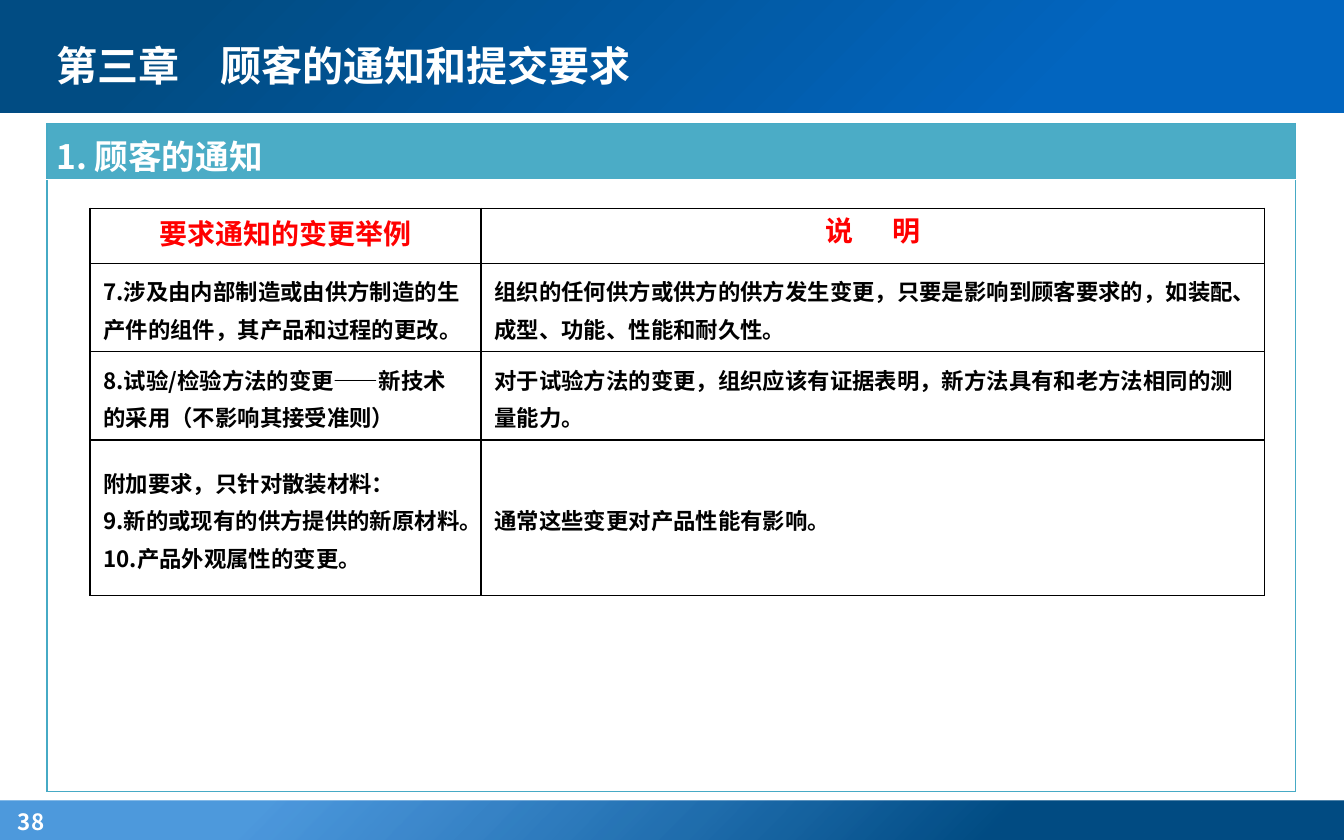
from dataclasses import dataclass

from lxml import etree
from pptx import Presentation
from pptx import oxml
from pptx import util as u
from pptx.dml.color import RGBColor
from pptx.enum import lang, shapes, text
from pptx.oxml import ns

Pt = u.Pt
NOTO, KARLA, TIMES = "Noto Sans CJK SC", "Karla", "Times New Roman"
WHITE, BLACK, RED = "FFFFFF", "000000", "FF0000"
TEAL, TEAL_LINE = "4BACC6", "46AAC5"
NAVY = "014C83"
WIDE_GAP = "\u3000"


@dataclass(frozen=True)
class Style:
    size: float
    font: str
    color: str


@dataclass(frozen=True)
class Band:
    top: float
    height: float
    stops: tuple  # (position %, colour, opacity %)


@dataclass(frozen=True)
class Change:
    example: tuple  # one entry per paragraph
    note: str
    height: float


TITLE = Style(22, TIMES, WHITE)
SECTION = Style(18, NOTO, WHITE)
HEADING = Style(15, KARLA, RED)
HEADING_GAP = Style(21, KARLA, RED)
BODY = Style(12, NOTO, BLACK)
PAGE = Style(12, NOTO, WHITE)

BANDS = (
    Band(429, 22.5, ((26, NAVY, 100), (80, "026DCE", 70))),
    Band(-2, 62.5, ((21, "0265BF", 100), (86, NAVY, 100))),
)
CHANGES = (
    Change(("7.涉及由内部制造或由供方制造的生产件的组件，其产品和过程的更改。",),
           "组织的任何供方或供方的供方发生变更，只要是影响到顾客要求的，"
           "如装配、成型、功能、性能和耐久性。", 29.5),
    Change(("8.试验/检验方法的变更——新技术的采用（不影响其接受准则）",),
           "对于试验方法的变更，组织应该有证据表明，"
           "新方法具有和老方法相同的测量能力。", 29.5),
    Change(("附加要求，只针对散装材料：",
            "9.新的或现有的供方提供的新原材料。",
            "10.产品外观属性的变更。"),
           "通常这些变更对产品性能有影响。", 83.5),
)


def rgb(color: str) -> RGBColor:
    return RGBColor.from_string(color)


def add_run(p, content: str, style: Style) -> None:
    r = p.add_run()
    r.text = content
    f = r.font
    f.size, f.name, f.bold = Pt(style.size), style.font, True
    f.color.rgb = rgb(style.color)
    f.language_id = lang.MSO_LANGUAGE_ID.SIMPLIFIED_CHINESE
    ea = etree.Element(ns.qn("a:ea"), typeface=NOTO)
    r._r.rPr.find(ns.qn("a:latin")).addnext(ea)


def add_band(s, band: Band, width: int) -> None:
    sp = s.shapes.add_shape(shapes.MSO_SHAPE.RECTANGLE, 0, Pt(band.top),
                            width, Pt(band.height))
    sp.shadow.inherit = False
    sp.line.fill.background()
    sp.fill.solid()
    stops = "".join(
        f'<a:gs pos="{pos * 1000}"><a:srgbClr val="{color}">'
        f'<a:alpha val="{opacity * 1000}"/></a:srgbClr></a:gs>'
        for pos, color, opacity in band.stops)
    grad = oxml.parse_xml(
        f'<a:gradFill {ns.nsdecls("a")} rotWithShape="1"><a:gsLst>{stops}</a:gsLst>'
        '<a:path path="circle"><a:fillToRect l="100000" t="100000"/></a:path>'
        '</a:gradFill>')
    props = sp._element.spPr
    props.replace(props.find(ns.qn("a:solidFill")), grad)


def add_label(s, left: float, top: float, width: float, height: float,
              content: str, style: Style, inset: float) -> None:
    tf = s.shapes.add_textbox(Pt(left), Pt(top), Pt(width), Pt(height)).text_frame
    tf.word_wrap = True
    tf.vertical_anchor = text.MSO_ANCHOR.MIDDLE
    tf.margin_left = Pt(inset)
    tf.margin_top = tf.margin_bottom = 0
    add_run(tf.paragraphs[0], content, style)


def add_table(s, left: float, top: float, widths: list, heights: list):
    table = s.shapes.add_table(len(heights), len(widths), Pt(left), Pt(top),
                               Pt(sum(widths)), Pt(sum(heights))).table
    table.first_row = table.horz_banding = False
    for column, width in zip(table.columns, widths):
        column.width = Pt(width)
    for row, height in zip(table.rows, heights):
        row.height = Pt(height)
    return table


def format_cell(cell, sides: str, color: str, weight: float, fill: str = "") -> None:
    props = cell._tc.get_or_add_tcPr()
    for side in sides:
        props.append(oxml.parse_xml(
            f'<a:ln{side} {ns.nsdecls("a")} w="{Pt(weight)}"><a:solidFill>'
            f'<a:srgbClr val="{color}"/></a:solidFill></a:ln{side}>'))
    if fill:
        cell.fill.solid()
        cell.fill.fore_color.rgb = rgb(fill)
    else:
        cell.fill.background()


def write_cell(cell, paragraphs: tuple, spacing: float, align=None) -> None:
    """Each paragraph is a tuple of (text, style) runs."""
    tf = cell.text_frame
    for i, runs in enumerate(paragraphs):
        p = tf.add_paragraph() if i else tf.paragraphs[0]
        p.line_spacing = Pt(spacing)
        p.alignment = align
        for content, style in runs:
            add_run(p, content, style)


def add_section_frame(s) -> None:
    table = add_table(s, 25.2, 66.2, [669], [30, 327.6])
    head, body = table.cell(0, 0), table.cell(1, 0)
    format_cell(head, "LRT", TEAL_LINE, 0.75, TEAL)
    format_cell(body, "LRTB", TEAL_LINE, 0.75)
    head.margin_left = head.margin_right = Pt(5)
    head.margin_top = head.margin_bottom = 0
    write_cell(head, ((("1. 顾客的通知", SECTION),),), 30)


def add_change_table(s) -> None:
    table = add_table(s, 48.2, 111.6, [209.5, 419.8],
                      [29.5] + [c.height for c in CHANGES])
    for cell in table.iter_cells():
        format_cell(cell, "LRTB", BLACK, 1)
    headings = (
        (("要求通知的变更举例", HEADING),),
        (("说", HEADING), (WIDE_GAP, HEADING_GAP), ("明", HEADING)),
    )
    for col, runs in enumerate(headings):
        write_cell(table.cell(0, col), (runs,), 20, text.PP_ALIGN.CENTER)
    for row, change in enumerate(CHANGES, 1):
        for col, lines in enumerate((change.example, (change.note,))):
            cell = table.cell(row, col)
            cell.vertical_anchor = text.MSO_ANCHOR.MIDDLE
            write_cell(cell, tuple(((line, BODY),) for line in lines), 20)


def main() -> None:
    prs = Presentation()
    prs.slide_width, prs.slide_height = Pt(720), Pt(450)
    s = prs.slides.add_slide(prs.slide_layouts[6])

    # Header and footer bands
    for band in BANDS:
        add_band(s, band, prs.slide_width)
    add_label(s, 0, 430, 42.5, 20, "38", PAGE, 9.6)
    add_label(s, 23, 9.4, 459.4, 51, f"第三章{WIDE_GAP}顾客的通知和提交要求", TITLE, 7.2)

    # Section frame with the table of changes
    add_section_frame(s)
    add_change_table(s)
    prs.save("out.pptx")


if __name__ == "__main__":
    main()
